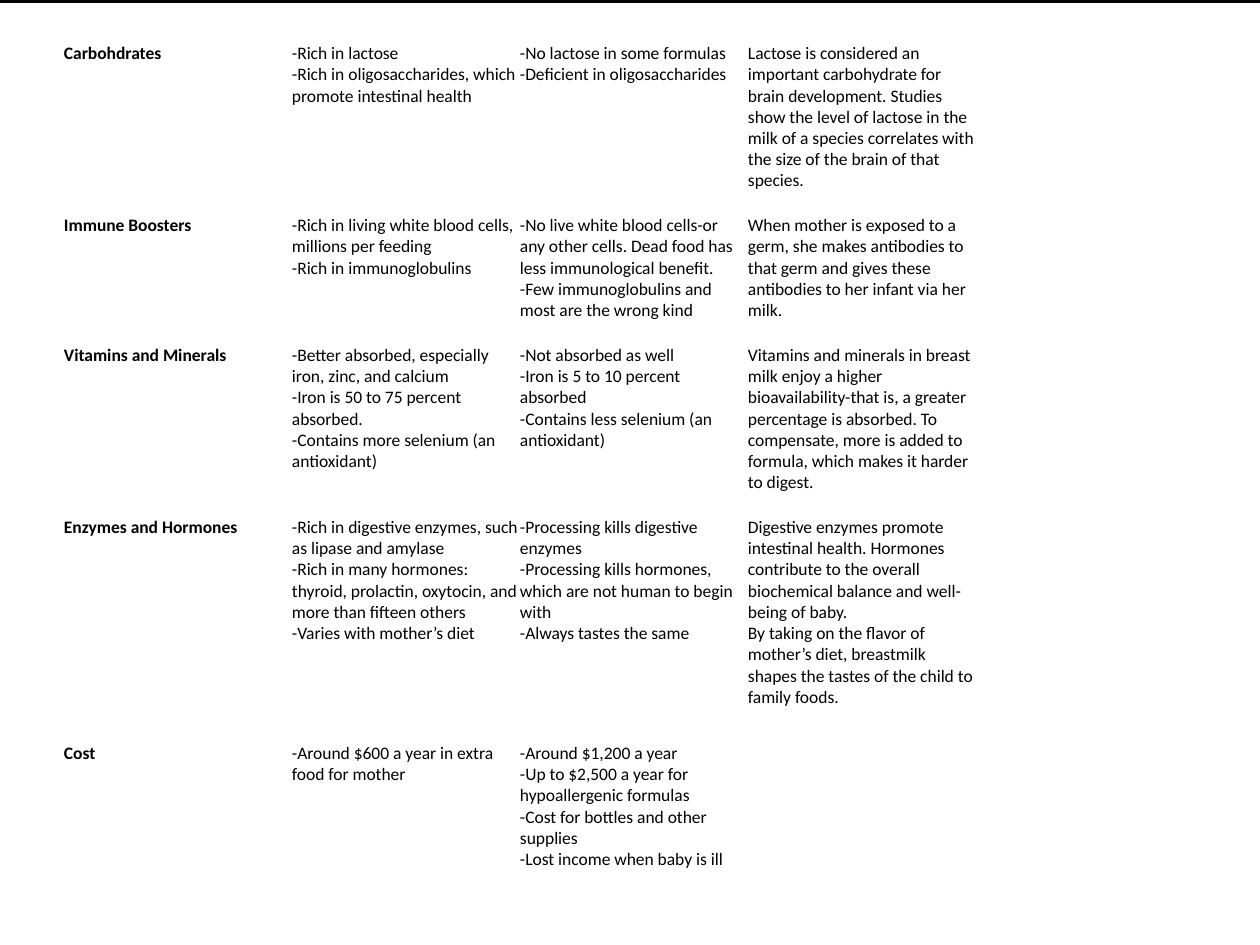
from pptx import Presentation
from pptx.dml.color import RGBColor
from pptx.enum.shapes import MSO_SHAPE
from pptx.util import Pt

PX = 914400 // 126
BLACK = RGBColor(0x00, 0x00, 0x00)

LEFT, TOP = 63, 42
COLUMN_WIDTH = 228
CELL_MARGIN = 1

# Row height, then topic, breast milk, formula and comment; "\v" is a line break.
ROWS = [
    (172, "Carbohdrates",
     "-Rich in lactose\v-Rich in oligosaccharides, which promote intestinal health",
     "-No lactose in some formulas\v-Deficient in oligosaccharides",
     "Lactose is considered an important carbohydrate for brain development. "
     "Studies show the level of lactose in the milk of a species correlates "
     "with the size of the brain of that species."),
    (130, "Immune Boosters",
     "-Rich in living white blood cells, millions per feeding\v"
     "-Rich in immunoglobulins",
     "-No live white blood cells-or any other cells. Dead food has less "
     "immunological benefit.\v-Few immunoglobulins and most are the wrong kind",
     "When mother is exposed to a germ, she makes antibodies to that germ and "
     "gives these antibodies to her infant via her milk."),
    (172, "Vitamins and Minerals",
     "-Better absorbed, especially iron, zinc, and calcium\v"
     "-Iron is 50 to 75 percent absorbed.\v"
     "-Contains more selenium (an antioxidant)",
     "-Not absorbed as well\v-Iron is 5 to 10 percent absorbed\v"
     "-Contains less selenium (an antioxidant)",
     "Vitamins and minerals in breast milk enjoy a higher bioavailability-that "
     "is, a greater percentage is absorbed. To compensate, more is added to "
     "formula, which makes it harder to digest."),
    (226, "Enzymes and Hormones",
     "-Rich in digestive enzymes, such as lipase and amylase\v"
     "-Rich in many hormones: thyroid, prolactin, oxytocin, and more than "
     "fifteen others\v-Varies with mother’s diet",
     "-Processing kills digestive enzymes\v"
     "-Processing kills hormones, which are not human to begin with\v"
     "-Always tastes the same",
     "Digestive enzymes promote intestinal health. Hormones contribute to the "
     "overall biochemical balance and well- being of baby.\v"
     "By taking on the flavor of mother’s diet, breastmilk shapes the tastes "
     "of the child to family foods."),
    (151, "Cost",
     "-Around $600 a year in extra food for mother",
     "-Around $1,200 a year\v-Up to $2,500 a year for hypoallergenic formulas\v"
     "-Cost for bottles and other supplies\v-Lost income when baby is ill",
     ""),
]

prs = Presentation()
prs.slide_width, prs.slide_height = 1260 * PX, 945 * PX
s = prs.slides.add_slide(prs.slide_layouts[6])

column_count = len(ROWS[0]) - 1
table = s.shapes.add_table(
    len(ROWS), column_count, LEFT * PX, TOP * PX,
    column_count * COLUMN_WIDTH * PX, sum(row[0] for row in ROWS) * PX).table
table.first_row = False
table.horz_banding = False
for column in table.columns:
    column.width = COLUMN_WIDTH * PX

for i, (height, *texts) in enumerate(ROWS):
    table.rows[i].height = height * PX
    for j, text in enumerate(texts):
        cell = table.cell(i, j)
        cell.fill.background()
        cell.margin_left = cell.margin_right = CELL_MARGIN * PX
        cell.margin_top = cell.margin_bottom = CELL_MARGIN * PX
        p = cell.text_frame.paragraphs[0]
        p.text = text
        p.font.name = "Calibri"
        p.font.size = Pt(10)
        p.font.bold = j == 0
        p.font.color.rgb = BLACK

top_rule = s.shapes.add_shape(MSO_SHAPE.RECTANGLE, 0, 0, 1260 * PX, 2 * PX)
top_rule.shadow.inherit = False
top_rule.fill.solid()
top_rule.fill.fore_color.rgb = BLACK
top_rule.line.color.rgb = BLACK
top_rule.line.width = Pt(0.75)

prs.save("out.pptx")
